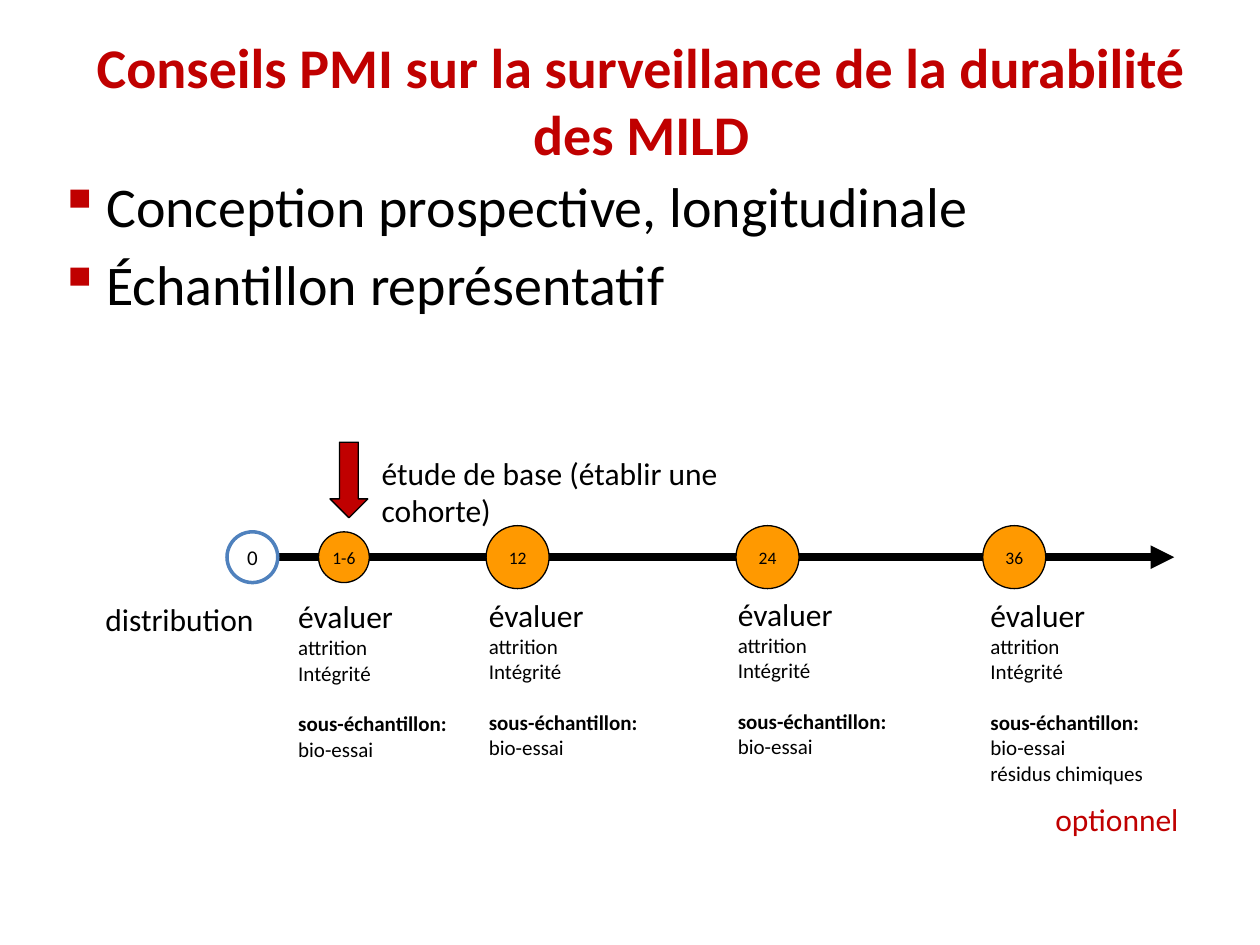
"""Build the slide on durability monitoring of long-lasting nets."""
import pptx
import pptx.util
import pptx.dml.color
import pptx.enum.shapes
import pptx.enum.text
import pptx.oxml

Pt = pptx.util.Pt
SHAPES = pptx.enum.shapes.MSO_SHAPE
ALIGN = pptx.enum.text.PP_ALIGN
NS = 'xmlns:a="http://schemas.openxmlformats.org/drawingml/2006/main"'
COLORS = {"red": "C00000", "black": "000000", "orange": "FF9900",
          "white": "FFFFFF", "blue": "4F81BD"}

TITLE = "Conseils PMI sur la surveillance de la durabilité des MILD"
POINTS = ["Conception prospective, longitudinale", "Échantillon représentatif"]
ASSESSMENT = [
    ("évaluer", {"size": 18}),
    ("attrition", {"size": 12}),
    ("Intégrité", {"size": 12}),
    ("sous-échantillon:", {"size": 12, "bold": True, "before": 14.6}),
    ("bio-essai", {"size": 12}),
]
RESIDUES = [("résidus chimiques", {"size": 12})]
LABELS = [
    (TITLE, (42.5, 15.1, 648, 85),
     {"size": 32, "bold": True, "color": "red", "align": ALIGN.CENTER}),
    ("optionnel", (524, 453.6, 156.5, 29),
     {"size": 18, "color": "red", "align": ALIGN.RIGHT}),
    ("distribution", (42.5, 339.1, 109.5, 29), {"size": 18, "align": ALIGN.RIGHT}),
    ("étude de base (établir une cohorte)", (211, 255.6, 232, 51), {"size": 18}),
]
AXIS_Y = 318.4
AXIS_ENDS = (139, 671)
MONTHS = [
    ("0", 144.2, 29, 12, "white", "blue", 2),
    ("1-6", 196.5, 29, 10, "orange", "black", 0.75),
    ("12", 295.8, 36, 10, "orange", "black", 0.75),
    ("24", 438.6, 36, 10, "orange", "black", 0.75),
    ("36", 579.6, 36, 10, "orange", "black", 0.75),
]
VISITS = [
    ((163.3, 337.7, 109.5, 101.5), ASSESSMENT),
    ((272.3, 337, 116, 101.5), ASSESSMENT),
    ((414.5, 336.2, 110, 101.5), ASSESSMENT),
    ((558.9, 337, 102.5, 116.6), ASSESSMENT + RESIDUES),
]


def rgb(name):
    return pptx.dml.color.RGBColor.from_string(COLORS[name])


def write(frame, lines):
    for index, (words, style) in enumerate(lines):
        paragraph = frame.paragraphs[0] if index == 0 else frame.add_paragraph()
        paragraph.alignment = style.get("align", ALIGN.LEFT)
        paragraph.space_before = Pt(style.get("before", 0))
        run = paragraph.add_run()
        run.text = words
        font_format = {"name": "Calibri", "size": Pt(style["size"]),
                       "bold": style.get("bold", False)}
        for key, value in font_format.items():
            setattr(run.font, key, value)
        run.font.color.rgb = rgb(style.get("color", "black"))


def add_text(slide, box, lines):
    frame = slide.shapes.add_textbox(*map(Pt, box)).text_frame
    frame.word_wrap = True
    write(frame, lines)
    return frame


def add_figure(slide, kind, box, fill, line, weight):
    figure = slide.shapes.add_shape(kind, *map(Pt, box))
    figure.shadow.inherit = False
    figure.fill.solid()
    figure.fill.fore_color.rgb = rgb(fill)
    figure.line.color.rgb = rgb(line)
    figure.line.width = Pt(weight)
    return figure


def add_points(slide):
    frame = add_text(slide, (26.6, 94.3, 680.4, 118.8),
                     [(point, {"size": 32, "before": 6.4}) for point in POINTS])
    for paragraph in frame.paragraphs:
        properties = paragraph._p.get_or_add_pPr()
        for key, value in {"marL": Pt(27), "indent": -Pt(27)}.items():
            properties.set(key, str(int(value)))
        for bullet in (f'<a:buClr {NS}><a:srgbClr val="{COLORS["red"]}"/></a:buClr>',
                       f'<a:buChar {NS} char="▪"/>'):
            properties.append(pptx.oxml.parse_xml(bullet))


def add_timeline(slide):
    start, end = AXIS_ENDS
    axis = slide.shapes.add_connector(
        pptx.enum.shapes.MSO_CONNECTOR.STRAIGHT, Pt(start), Pt(AXIS_Y), Pt(end), Pt(AXIS_Y))
    axis.line.color.rgb = rgb("black")
    axis.line.width = Pt(4.5)
    axis.line._get_or_add_ln().append(
        pptx.oxml.parse_xml(f'<a:tailEnd {NS} type="triangle"/>'))
    axis._element.spPr.append(pptx.oxml.parse_xml(f"<a:effectLst {NS}/>"))
    for month, center, diameter, size, fill, line, weight in MONTHS:
        box = (center - diameter / 2, AXIS_Y - diameter / 2, diameter, diameter)
        frame = add_figure(slide, SHAPES.OVAL, box, fill, line, weight).text_frame
        frame_format = {"margin_left": 0, "margin_right": 0, "margin_top": 0,
                        "margin_bottom": 0, "word_wrap": False,
                        "vertical_anchor": pptx.enum.text.MSO_ANCHOR.MIDDLE}
        for key, value in frame_format.items():
            setattr(frame, key, value)
        write(frame, [(month, {"size": size, "align": ALIGN.CENTER})])
    add_figure(slide, SHAPES.DOWN_ARROW, (188.6, 252.7, 21.6, 43.2), "red", "black", 0.75)


def main():
    deck = pptx.Presentation()
    deck.slide_width, deck.slide_height = Pt(720), Pt(540)
    slide = deck.slides.add_slide(deck.slide_layouts[6])
    add_points(slide)
    add_timeline(slide)
    for words, box, style in LABELS:
        add_text(slide, box, [(words, style)])
    for box, lines in VISITS:
        add_text(slide, box, lines)
    deck.save("out.pptx")


if __name__ == "__main__":
    main()
